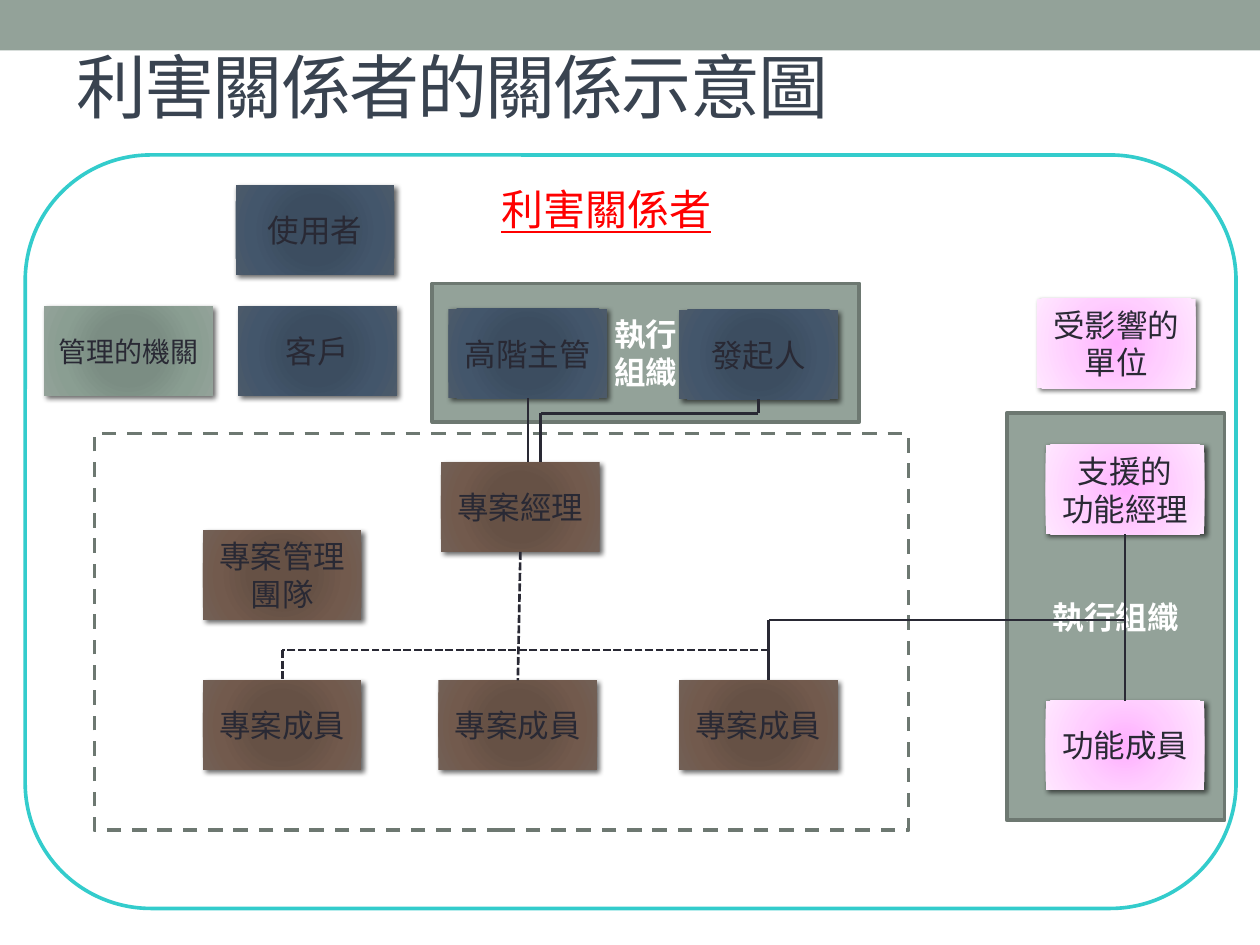
import pptx
import pptx.util
import pptx.dml.color
import pptx.enum.dml
import pptx.enum.shapes
import pptx.enum.text
import pptx.oxml.ns
from lxml import etree
from pptx.util import Inches, Pt

COLORS = {
    "sage": "93A299", "sage_edge": "6D7871", "title": "394350", "ink": "292934",
    "white": "FFFFFF", "frame": "33CCCC", "caption": "FF0000", "shadow": "000000",
}
GRADIENTS = {
    "blue": [(0, "3B4D61"), (34, "3C4D60"), (70, "43566B"), (100, "4C5A6A")],
    "green": [(0, "7B8E82"), (34, "7B8D83"), (70, "8A9E92"), (100, "93A299")],
    "brown": [(0, "685044"), (34, "665145"), (70, "725A4D"), (100, "726056")],
    "pink": [(0, "FFAFFF"), (50, "FFCEFF"), (100, "FFE7FF")],
}
CJK_FONT = "Noto Sans CJK SC"
CARD_W, CARD_H = 1.26, 0.71
TOP, BOTTOM = 0, 2
SHAPE = pptx.enum.shapes.MSO_SHAPE
DASH = pptx.enum.dml.MSO_LINE
ALIGN = pptx.enum.text.PP_ALIGN
ANCHOR = pptx.enum.text.MSO_ANCHOR
qn = pptx.oxml.ns.qn


def rgb(name):
    return pptx.dml.color.RGBColor.from_string(COLORS[name])


def add_node(parent, tag, **attributes):
    return etree.SubElement(parent, qn(tag), {k: str(v) for k, v in attributes.items()})


def write(shape, text, size, color, font=CJK_FONT, align=ALIGN.CENTER,
          anchor=ANCHOR.MIDDLE, bold=False, underline=False, wrap=True, spacing=None):
    frame = shape.text_frame
    frame.word_wrap = wrap
    frame.vertical_anchor = anchor
    frame.text = text
    for paragraph in frame.paragraphs:
        paragraph.alignment = align
        paragraph.font.size = Pt(size)
        paragraph.font.bold = bold
        paragraph.font.underline = underline
        paragraph.font.color.rgb = rgb(color)
        paragraph.font.name = font
        properties = paragraph._p.pPr.find(qn("a:defRPr"))
        add_node(properties, "a:ea", typeface=CJK_FONT)
        if spacing is not None:
            properties.set("spc", str(spacing))


def add_area(slide, left, top, width, height, kind=SHAPE.RECTANGLE,
             fill=None, edge=None, dash=None):
    area = slide.shapes.add_shape(kind, Inches(left), Inches(top), Inches(width), Inches(height))
    area.shadow.inherit = False
    if fill:
        area.fill.solid()
        area.fill.fore_color.rgb = rgb(fill)
    else:
        area.fill.background()
    if edge:
        area.line.color.rgb = rgb(edge)
        area.line.width = Pt(2.08)
        if dash:
            area.line.dash_style = dash
    else:
        area.line.fill.background()
    return area


def add_card(slide, left, top, text, palette, width=CARD_W, size=18):
    card = add_area(slide, left, top, width, CARD_H)
    card.fill.gradient()
    properties = card._element.spPr
    gradient = properties.find(qn("a:gradFill"))
    for child in list(gradient):
        gradient.remove(child)
    stops = add_node(gradient, "a:gsLst")
    for position, color in GRADIENTS[palette]:
        add_node(add_node(stops, "a:gs", pos=position * 1000), "a:srgbClr", val=color)
    circle = add_node(gradient, "a:path", path="circle")
    add_node(circle, "a:fillToRect", l=50000, t=50000, r=50000, b=50000)
    shadow = add_node(properties.find(qn("a:effectLst")), "a:outerShdw", blurRad=Pt(3),
                      dist=Pt(2), dir=45 * 60000, algn="tl", rotWithShape=0)
    add_node(add_node(shadow, "a:srgbClr", val=COLORS["shadow"]), "a:alpha", val=60000)
    write(card, text, size, "ink")
    return card


def add_link(slide, start, end, begin=None, finish=None, dashed=False):
    link = slide.shapes.add_connector(
        pptx.enum.shapes.MSO_CONNECTOR.STRAIGHT, *(Inches(v) for v in start + end))
    if begin:
        link.begin_connect(begin, BOTTOM)
    if finish:
        link.end_connect(finish, TOP)
    link.line.color.rgb = rgb("ink")
    link.line.width = Pt(1.5)
    if dashed:
        link.line.dash_style = DASH.SQUARE_DOT
        link.line._ln.find(qn("a:prstDash")).set("val", "sysDash")
    add_node(link._element.spPr, "a:effectLst")


def add_header(slide, left, top, width, height):
    add_area(slide, left, top, width, 0.4, fill="sage")
    title = slide.shapes.add_textbox(
        Inches(left + 0.51), Inches(top + 0.21), Inches(9), Inches(height - 0.21))
    write(title, "利害關係者的關係示意圖", 40, "title", align=ALIGN.LEFT, spacing=-100)


def add_executives(slide, left, top, width, height):
    panel = add_area(slide, left, top, width, height, fill="sage", edge="sage_edge")
    write(panel, "執行\n組織", 18, "white", font="Arial", bold=True)
    manager = add_card(slide, left + 0.13, top + 0.2, "高階主管", "blue")
    sponsor = add_card(slide, left + 1.96, top + 0.21, "發起人", "blue")
    return manager, sponsor


def add_support(slide, left, top, width, height):
    panel = add_area(slide, left, top, width, height, fill="sage", edge="sage_edge")
    write(panel, "執行組織", 18, "white", font="Arial", bold=True)
    manager = add_card(slide, left + 0.31, top + 0.25, "支援的\n功能經理", "pink")
    member = add_card(slide, left + 0.31, top + 2.28, "功能成員", "pink")
    center = left + 0.94
    add_link(slide, (center, top + 0.96), (center, top + 2.28), manager, member)


def add_stakeholders(slide, left, top, width, height):
    add_area(slide, left, top, width, height, SHAPE.ROUNDED_RECTANGLE, edge="frame")
    add_card(slide, left + 1.67, top + 0.24, "使用者", "blue")
    add_card(slide, left + 0.15, top + 1.2, "管理的機關", "green", width=1.34, size=16)
    add_card(slide, left + 1.69, top + 1.2, "客戶", "blue")
    add_card(slide, left + 8.03, top + 1.14, "受影響的單位", "pink")
    caption = slide.shapes.add_textbox(
        Inches(left + 3.68), Inches(top + 0.18), Inches(1.88), Inches(0.5))
    write(caption, "利害關係者", 24, "caption", align=ALIGN.LEFT,
          anchor=ANCHOR.TOP, underline=True, wrap=False)


def add_project(slide, left, top, width, height, executive, sponsor):
    add_area(slide, left, top, width, height, edge="sage_edge", dash=DASH.DASH)
    manager = add_card(slide, left + 2.75, top + 0.23, "專案經理", "brown")
    add_card(slide, left + 0.86, top + 0.77, "專案管理\u200b團隊".replace("\u200b", ""), "brown")
    member_top = top + 1.96
    members = [add_card(slide, left + offset, member_top, "專案成員", "brown")
               for offset in (0.86, 2.73, 4.64)]

    bend_x, bend_y = left + 3.54, top - 0.16
    sponsor_x, manager_top = left + 5.27, top + 0.23
    add_link(slide, (left + 3.44, top - 0.28), (left + 3.44, manager_top), executive)
    add_link(slide, (sponsor_x, top - 0.27), (sponsor_x, bend_y), sponsor)
    add_link(slide, (sponsor_x, bend_y), (bend_x, bend_y))
    add_link(slide, (bend_x, bend_y), (bend_x, manager_top))

    add_link(slide, (left + 3.38, top + 0.94), (left + 3.36, member_top),
             manager, members[1], dashed=True)
    first_x, last_x, team_y = left + 1.49, left + 5.35, top + 1.72
    add_link(slide, (last_x, team_y), (first_x, team_y), dashed=True)
    add_link(slide, (first_x, team_y), (first_x, member_top), finish=members[0], dashed=True)

    support_x, support_y = left + 8.18, top + 1.48
    add_link(slide, (support_x, support_y), (last_x, support_y))
    add_link(slide, (last_x, support_y), (last_x, member_top))


def main():
    presentation = pptx.Presentation()
    presentation.slide_width = Inches(10)
    presentation.slide_height = Inches(7.5)
    slide = presentation.slides.add_slide(presentation.slide_layouts[6])
    add_header(slide, 0, 0, 10, 1.14)
    add_stakeholders(slide, 0.2, 1.23, 9.61, 5.98)
    executive, sponsor = add_executives(slide, 3.43, 2.25, 3.39, 1.1)
    add_support(slide, 7.99, 3.28, 1.73, 3.23)
    add_project(slide, 0.75, 3.44, 6.46, 3.15, executive, sponsor)
    presentation.save("out.pptx")


if __name__ == "__main__":
    main()
